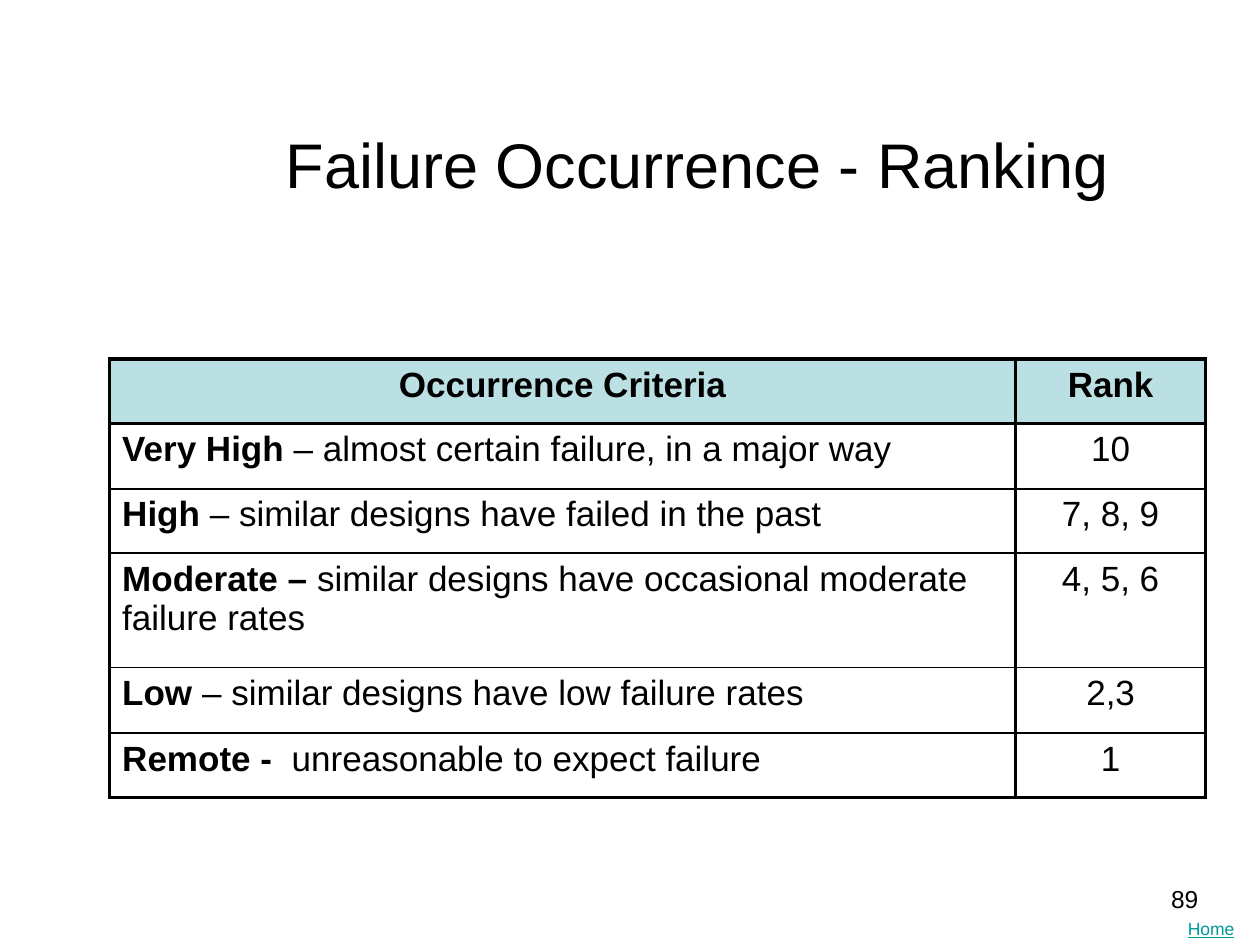
from lxml import etree
from pptx import Presentation
from pptx.dml.color import RGBColor
from pptx.enum.text import MSO_ANCHOR, PP_ALIGN
from pptx.oxml.ns import qn
from pptx.util import Inches, Pt

LEFT, CENTER, RIGHT = PP_ALIGN.LEFT, PP_ALIGN.CENTER, PP_ALIGN.RIGHT
TOP, MIDDLE = MSO_ANCHOR.TOP, MSO_ANCHOR.MIDDLE
BLACK, TEAL, HEADER_FILL = "000000", "009999", "BBE0E3"
THICK, THIN = 2.25, 1

COLUMN_WIDTHS = [7.19, 1.51]
ROW_HEIGHTS = [0.51, 0.52, 0.51, 0.91, 0.52, 0.51]
RANKINGS = [
    ("Occurrence Criteria", "", "Rank"),
    ("Very High", " – almost certain failure, in a major way", "10"),
    ("High", " – similar designs have failed in the past", "7, 8, 9"),
    ("Moderate – ", "similar designs have occasional moderate failure rates", "4, 5, 6"),
    ("Low", " – similar designs have low failure rates", "2,3"),
    ("Remote - ", " unreasonable to expect failure", "1"),
]


def color(value):
    return RGBColor.from_string(value)


def write_runs(paragraph, runs, size, alignment=LEFT, ink=BLACK):
    paragraph.alignment = alignment
    for text, extra in runs:
        run = paragraph.add_run()
        run.text = text
        formats = {"name": "Arial", "size": Pt(size), "bold": False, **extra}
        for attribute, value in formats.items():
            setattr(run.font, attribute, value)
        run.font.color.rgb = color(ink)


def add_text(slide, box, text, size, alignment=LEFT, anchor=TOP, ink=BLACK, **extra):
    shape = slide.shapes.add_textbox(*map(Inches, box))
    frame = shape.text_frame
    frame.word_wrap = True
    frame.vertical_anchor = anchor
    write_runs(frame.paragraphs[0], [(text, extra)], size, alignment, ink)


def set_borders(cell, widths):
    properties = cell._tc.get_or_add_tcPr()
    for position, (side, width) in enumerate(widths.items()):
        line = etree.Element(qn(f"a:ln{side}"), w=str(Pt(width)))
        fill = etree.SubElement(line, qn("a:solidFill"))
        etree.SubElement(fill, qn("a:srgbClr"), val=BLACK)
        properties.insert(position, line)


def fill_cell(cell, runs, alignment, row):
    write_runs(cell.text_frame.paragraphs[0], runs, 20, alignment)
    if row == 0:
        cell.fill.solid()
        cell.fill.fore_color.rgb = color(HEADER_FILL)
    else:
        cell.fill.background()
    top = THICK if row <= 1 else THIN
    bottom = THICK if row in (0, len(RANKINGS) - 1) else THIN
    set_borders(cell, {"L": THICK, "R": THICK, "T": top, "B": bottom})


def add_ranking_table(slide):
    size = (len(RANKINGS), len(COLUMN_WIDTHS))
    box = map(Inches, (0.87, 2.85, sum(COLUMN_WIDTHS), sum(ROW_HEIGHTS)))
    table = slide.shapes.add_table(*size, *box).table
    table.first_row = table.horz_banding = False
    for column, width in zip(table.columns, COLUMN_WIDTHS):
        column.width = Inches(width)
    for row, height in zip(table.rows, ROW_HEIGHTS):
        row.height = Inches(height)
    for row, (level, description, rank) in enumerate(RANKINGS):
        criteria = [(level, {"bold": True})]
        if description:
            criteria.append((description, {}))
        fill_cell(table.cell(row, 0), criteria, LEFT if row else CENTER, row)
        fill_cell(table.cell(row, 1), [(rank, {"bold": row == 0})], CENTER, row)


def main():
    presentation = Presentation()
    presentation.slide_width = Inches(10)
    presentation.slide_height = Inches(7.5)
    slide = presentation.slides.add_slide(presentation.slide_layouts[6])
    add_text(slide, (9.33, 7.24, 0.67, 0.27), "Home", 10, ink=TEAL, underline=True)
    add_text(slide, (7.21, 6.97, 2.4, 0.5), "89", 14, RIGHT)
    add_text(slide, (1.5, 0.67, 8.07, 1.25), "Failure Occurrence - Ranking", 36, CENTER, MIDDLE)
    add_ranking_table(slide)
    presentation.save("out.pptx")


if __name__ == "__main__":
    main()
